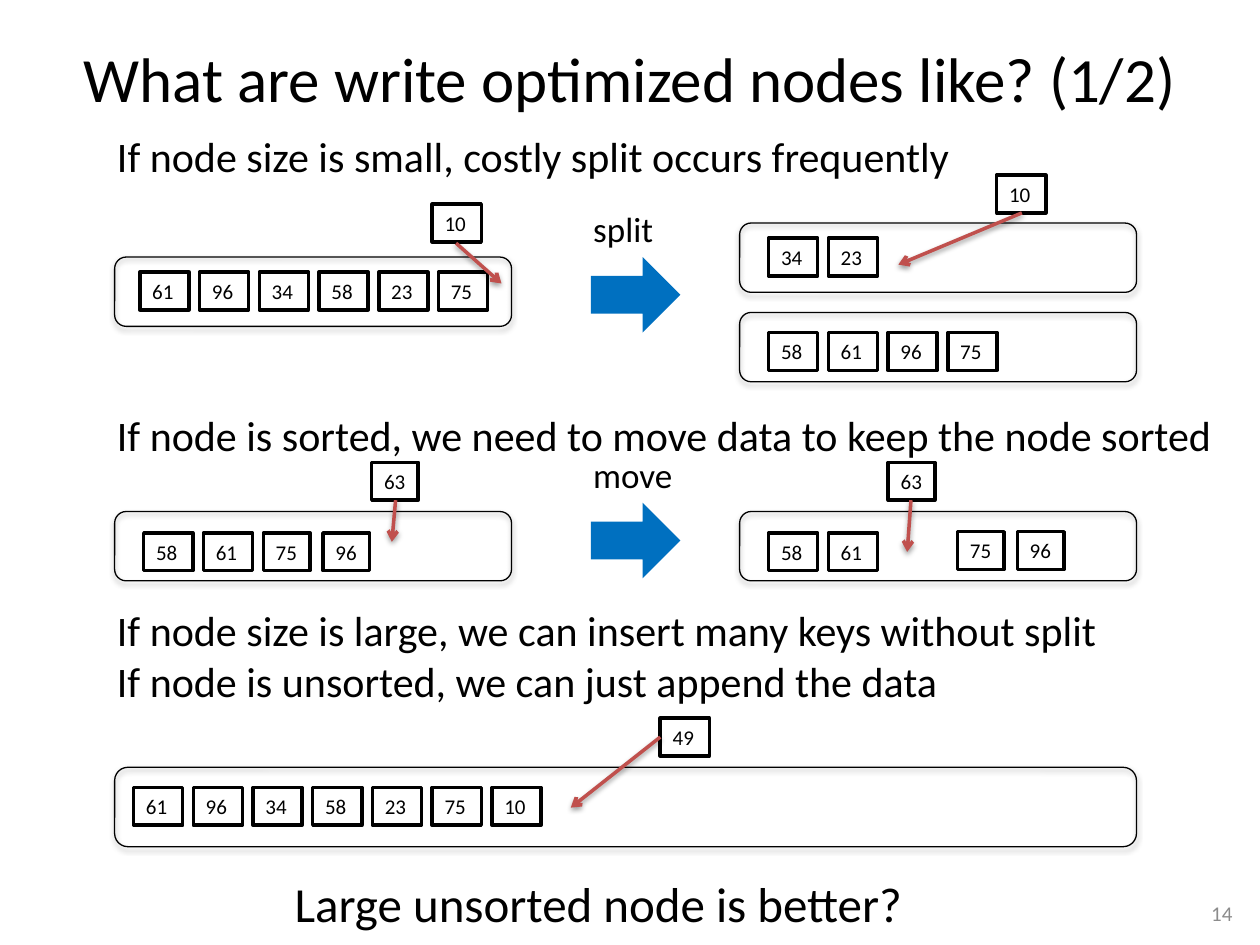
"""Build the slide on write optimized nodes."""
from dataclasses import dataclass
from typing import Any, NamedTuple

from lxml import etree
from pptx import Presentation
from pptx import util as u
from pptx.dml import color
from pptx.enum import shapes, text
from pptx.oxml import ns


@dataclass(frozen=True)
class Theme:
    font: str = "Calibri"
    ink: str = "000000"
    paper: str = "FFFFFF"
    red: str = "C0504D"
    blue: str = "0070C0"
    gray: str = "8C8C8C"
    title: int = 36
    close: int = 28
    body: int = 24
    verb: int = 20
    small: int = 12
    thick: float = 2
    thin: float = 0.75


class Label(NamedTuple):
    box: tuple[float, float, float, float]
    lines: list[str]
    size: int
    hue: str = "000000"
    wrap: bool = False
    side: Any = text.PP_ALIGN.LEFT
    stand: Any = text.MSO_ANCHOR.TOP


class Row(NamedTuple):
    left: float
    top: float
    keys: str
    width: float = 0.39


class Line(NamedTuple):
    start: tuple[float, float]
    end: tuple[float, float]


LOOK = Theme()
STEP = 0.474
KIND = shapes.MSO_SHAPE
MID = text.MSO_ANCHOR.MIDDLE

LABELS = [
    Label((0.5, 0.14, 9, 0.94), ["What are write optimized nodes like? (1/2)"],
          LOOK.title, wrap=True, side=text.PP_ALIGN.CENTER, stand=MID),
    Label((0.83, 0.99, 6.98, 0.5),
          ["If node size is small, costly split occurs frequently"], LOOK.body),
    Label((0.83, 3.2, 8.97, 0.5),
          ["If node is sorted, we need to move data to keep the node sorted"],
          LOOK.body),
    Label((0.83, 4.75, 8.04, 0.91),
          ["If node size is large, we can insert many keys without split",
           "If node is unsorted, we can just append the data"], LOOK.body),
    Label((4.61, 1.6, 0.68, 0.44), ["split"], LOOK.verb),
    Label((4.61, 3.55, 0.84, 0.44), ["move"], LOOK.verb),
    Label((2.24, 6.88, 5.43, 0.57), ["Large unsorted node is better?"],
          LOOK.close, wrap=True),
    Label((7.55, 7.05, 2.33, 0.4), ["14"], LOOK.small, LOOK.gray,
          True, text.PP_ALIGN.RIGHT, MID),
]
ROWS = [
    Row(3.43, 1.62, "10"), Row(1.11, 2.16, "61 96 34 58 23 75"),
    Row(7.91, 1.39, "10"), Row(6.1, 1.89, "34 23"),
    Row(6.1, 2.64, "58 61 96 75"),
    Row(2.95, 3.67, "63", 0.37), Row(1.14, 4.23, "58 61"),
    Row(2.09, 4.23, "75 96", 0.37),
    Row(7.05, 3.67, "63", 0.37), Row(6.1, 4.23, "58 61"),
    Row(7.6, 4.22, "75 96", 0.37),
    Row(5.24, 5.7, "49"), Row(1.06, 6.25, "61 96 34 58 23 75 10"),
]
NODES = [
    (0.91, 2.04, 3.15, 0.55), (5.87, 1.77, 3.15, 0.55),
    (5.87, 2.48, 3.15, 0.55), (0.91, 4.06, 3.15, 0.55),
    (5.87, 4.06, 3.15, 0.55), (0.91, 6.09, 8.11, 0.63),
]
BLOCKS = [(4.69, 2.04, 0.71, 0.6), (4.69, 3.99, 0.71, 0.6)]
LINES = [
    Line((3.62, 1.93), (3.98, 2.25)), Line((8.11, 1.69), (7.13, 2.1)),
    Line((3.14, 3.97), (3.11, 4.3)), Line((7.23, 3.97), (7.2, 4.38)),
    Line((5.24, 5.85), (4.53, 6.41)),
]


def apply(item: Any, form: dict[str, Any]) -> None:
    for name, value in form.items():
        setattr(item, name, value)


def inch(*sizes: float) -> list[u.Length]:
    return [u.Inches(size) for size in sizes]


def tint(hue: str) -> color.RGBColor:
    return color.RGBColor.from_string(hue)


def stroke(line: Any, hue: str, width: float) -> None:
    line.color.rgb = tint(hue)
    line.width = u.Pt(width)


def shade(item: Any) -> None:
    props = item._element.spPr
    for old in props.findall(ns.qn("a:effectLst")):
        props.remove(old)
    group = etree.SubElement(props, ns.qn("a:effectLst"))
    drop = etree.SubElement(group, ns.qn("a:outerShdw"), blurRad=str(u.Pt(3.1)),
                            dist=str(u.Pt(1.6)), dir="5400000", rotWithShape="0")
    hue = etree.SubElement(drop, ns.qn("a:srgbClr"), val=LOOK.ink)
    etree.SubElement(hue, ns.qn("a:alpha"), val="38000")


def write(item: Any, label: Label) -> None:
    frame = item.text_frame
    frame.text = "\n".join(label.lines)
    apply(frame, {"word_wrap": label.wrap, "vertical_anchor": label.stand})
    for para in frame.paragraphs:
        para.alignment = label.side
        apply(para.runs[0].font, {"name": LOOK.font, "size": u.Pt(label.size)})
        para.runs[0].font.color.rgb = tint(label.hue)


def shape(slide: Any, kind: Any, box: tuple[float, ...], fill: str = "") -> Any:
    item = slide.shapes.add_shape(kind, *inch(*box))
    item.shadow.inherit = False
    if fill:
        item.fill.solid()
        item.fill.fore_color.rgb = tint(fill)
    else:
        item.fill.background()
    return item


def draw_row(slide: Any, row: Row) -> None:
    for spot, key in enumerate(row.keys.split()):
        box = (row.left + spot * STEP, row.top, row.width, 0.3)
        cell = shape(slide, KIND.RECTANGLE, box, LOOK.paper)
        stroke(cell.line, LOOK.ink, LOOK.thick)
        write(cell, Label(box, [key], LOOK.small))


def draw_node(slide: Any, box: tuple[float, ...]) -> None:
    node = shape(slide, KIND.ROUNDED_RECTANGLE, box)
    stroke(node.line, LOOK.ink, LOOK.thin)
    shade(node)


def draw_line(slide: Any, line: Line) -> None:
    item = slide.shapes.add_connector(shapes.MSO_CONNECTOR.STRAIGHT,
                                      *inch(*line.start, *line.end))
    stroke(item.line, LOOK.red, LOOK.thick)
    etree.SubElement(item.line._get_or_add_ln(), ns.qn("a:tailEnd"), type="arrow")
    shade(item)


def main() -> None:
    deck = Presentation()
    apply(deck, {"slide_width": u.Inches(10), "slide_height": u.Inches(7.5)})
    slide = deck.slides.add_slide(deck.slide_layouts[6])
    for row in ROWS:
        draw_row(slide, row)
    for box in NODES:
        draw_node(slide, box)
    for box in BLOCKS:
        shape(slide, KIND.RIGHT_ARROW, box, LOOK.blue).line.fill.background()
    for label in LABELS:
        write(slide.shapes.add_textbox(*inch(*label.box)), label)
    for line in LINES:
        draw_line(slide, line)
    deck.save("out.pptx")


if __name__ == "__main__":
    main()
